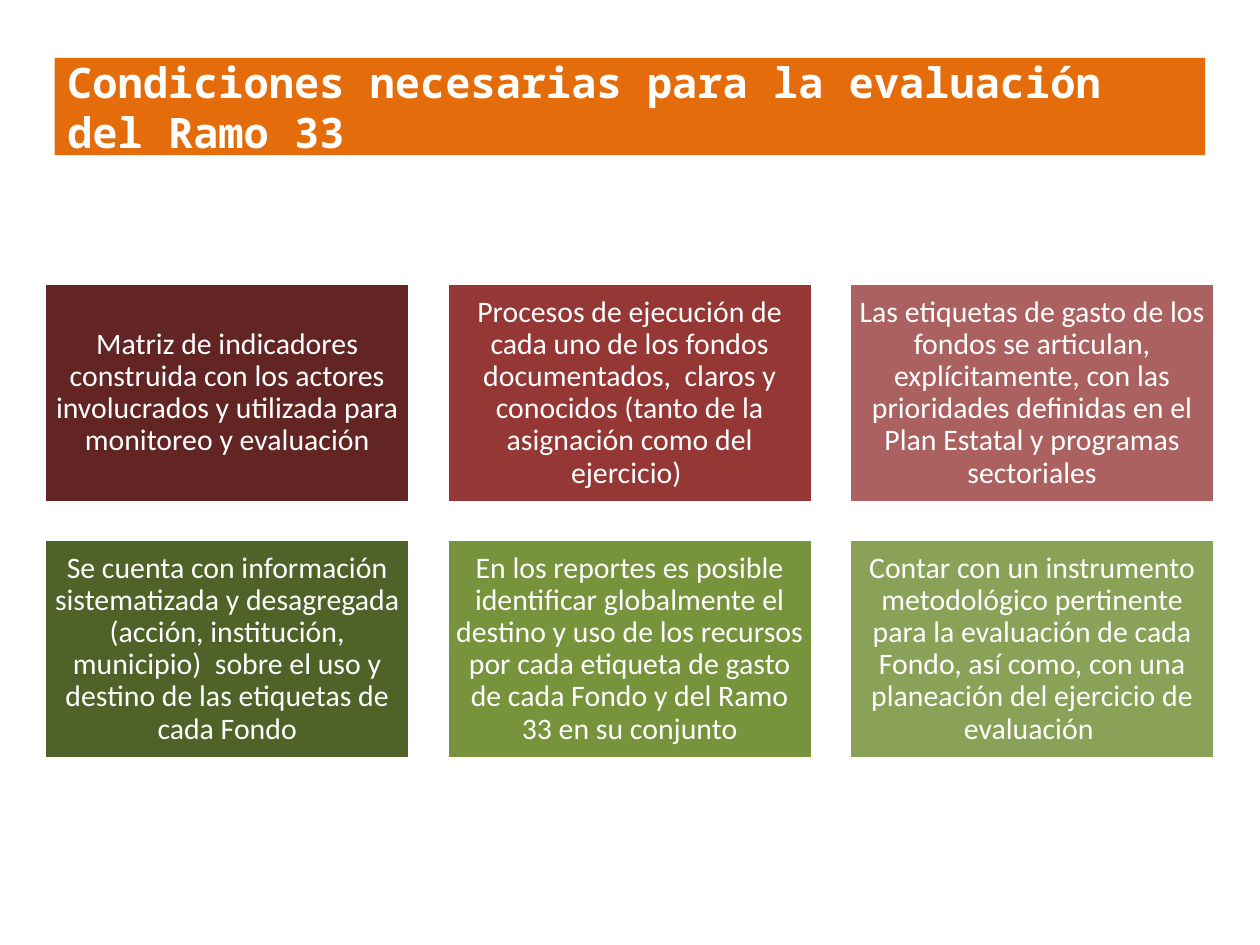
"""Builds the slide on the conditions needed to evaluate Ramo 33."""
from lxml import etree
from pptx import Presentation
from pptx.dml.color import RGBColor
from pptx.enum import shapes, text
from pptx.oxml import ns
from pptx.util import Pt

WHITE = RGBColor(0xFF, 0xFF, 0xFF)
ORANGE = RGBColor(0xE4, 0x6C, 0x0A)
MAROON = RGBColor(0x63, 0x25, 0x23)
RED = RGBColor(0x95, 0x37, 0x35)
OLIVE = RGBColor(0x4F, 0x62, 0x28)
GREEN = RGBColor(0x77, 0x93, 0x3C)


def write(shape, words, size=17, font="Calibri", bold=False,
          align=text.PP_ALIGN.CENTER, space=0.9, inset=(5.04, 5.04)):
    frame = shape.text_frame
    frame.word_wrap = True
    frame.auto_size = text.MSO_AUTO_SIZE.NONE
    frame.vertical_anchor = text.MSO_ANCHOR.MIDDLE
    frame.margin_left = frame.margin_right = Pt(inset[0])
    frame.margin_top = frame.margin_bottom = Pt(inset[1])
    par = frame.paragraphs[0]
    par.alignment = align
    par.line_spacing = space
    run = par.add_run()
    run.text = words
    run.font.size = Pt(size)
    run.font.name = font
    run.font.bold = bold
    run.font.color.rgb = WHITE


deck = Presentation()
deck.slide_width, deck.slide_height = Pt(720), Pt(540)
slide = deck.slides.add_slide(deck.slide_layouts[5])

title = slide.shapes.title
title.left, title.top = Pt(31.2), Pt(33.1)
title.width, title.height = Pt(657.5), Pt(55.5)
title.fill.solid()
title.fill.fore_color.rgb = ORANGE
write(title, "Condiciones necesarias para la evaluación del Ramo 33",
      size=24, font="Noto Sans Mono", bold=True,
      align=text.PP_ALIGN.LEFT, space=1.0, inset=(7.2, 3.6))

cards = [
    (MAROON, 100, "Matriz de indicadores construida con los actores "
     "involucrados y utilizada para monitoreo y evaluación"),
    (RED, 100, "Procesos de ejecución de cada uno de los fondos "
     "documentados,  claros y conocidos (tanto de la asignación como "
     "del ejercicio) "),
    (RED, 79, "Las etiquetas de gasto de los fondos se articulan, "
     "explícitamente, con las prioridades definidas en el Plan Estatal "
     "y programas sectoriales"),
    (OLIVE, 100, "Se cuenta con información sistematizada y desagregada "
     "(acción, institución, municipio)  sobre el uso y destino de las "
     "etiquetas de cada Fondo"),
    (GREEN, 100, "En los reportes es posible identificar globalmente el "
     "destino y uso de los recursos por cada etiqueta de gasto de cada "
     "Fondo y del Ramo 33 en su conjunto"),
    (GREEN, 86, "Contar con un instrumento metodológico pertinente para la "
     "evaluación de cada Fondo, así como, con una planeación del "
     "ejercicio de evaluación "),
]
left, top, wide, high, gap = 25.3, 162, 209, 125.3, 21

for spot, (color, alpha, words) in enumerate(cards):
    row, col = divmod(spot, 3)
    card = slide.shapes.add_shape(
        shapes.MSO_SHAPE.RECTANGLE,
        Pt(left + col * (wide + gap)), Pt(top + row * (high + gap)),
        Pt(wide), Pt(high))
    card.shadow.inherit = False
    card.fill.solid()
    card.fill.fore_color.rgb = color
    if alpha < 100:
        tint = card.fill._xPr.find(".//" + ns.qn("a:srgbClr"))
        etree.SubElement(tint, ns.qn("a:alpha"), val=str(alpha * 1000))
    card.line.color.rgb = WHITE
    card.line.width = Pt(2)
    write(card, words)

deck.save("out.pptx")
